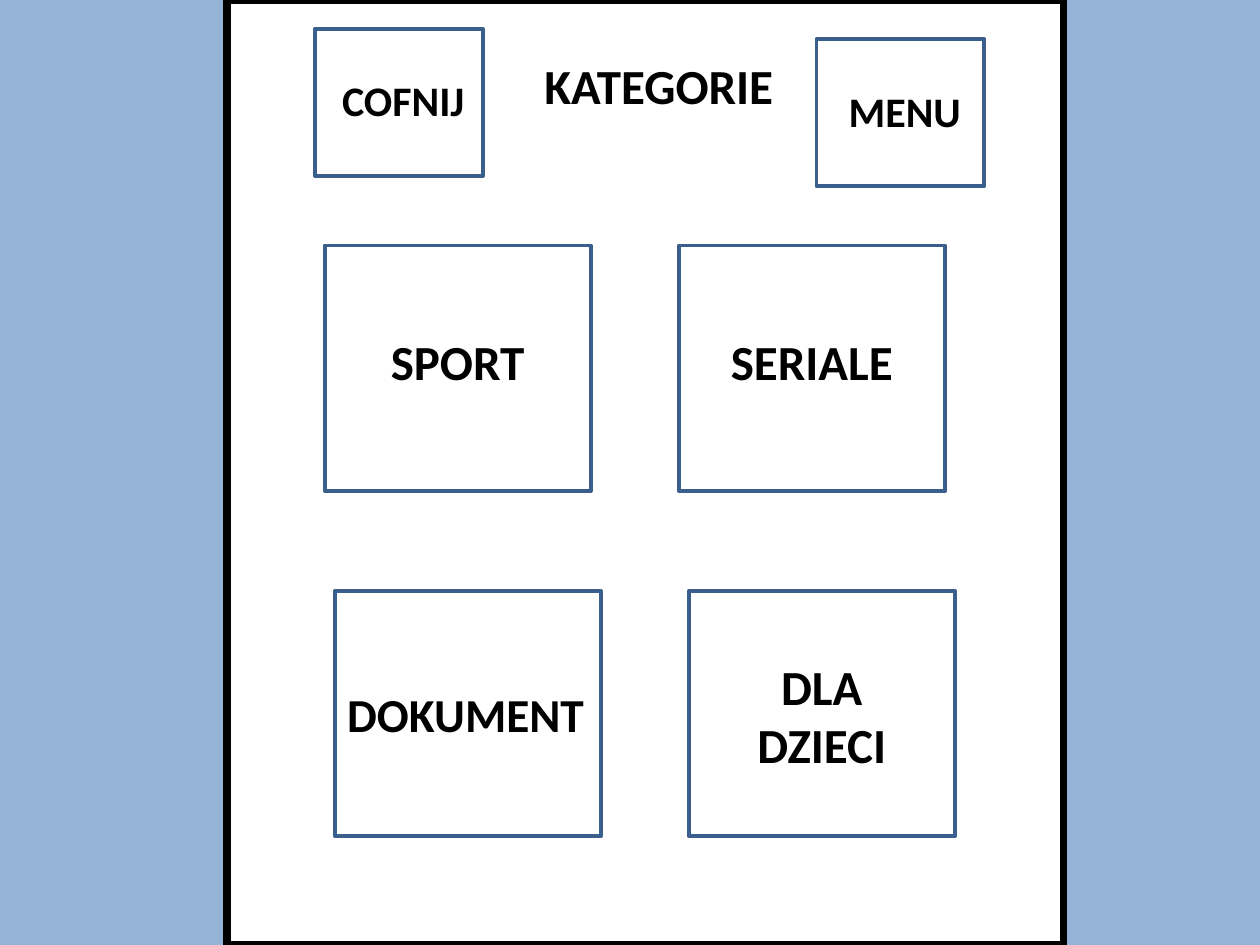
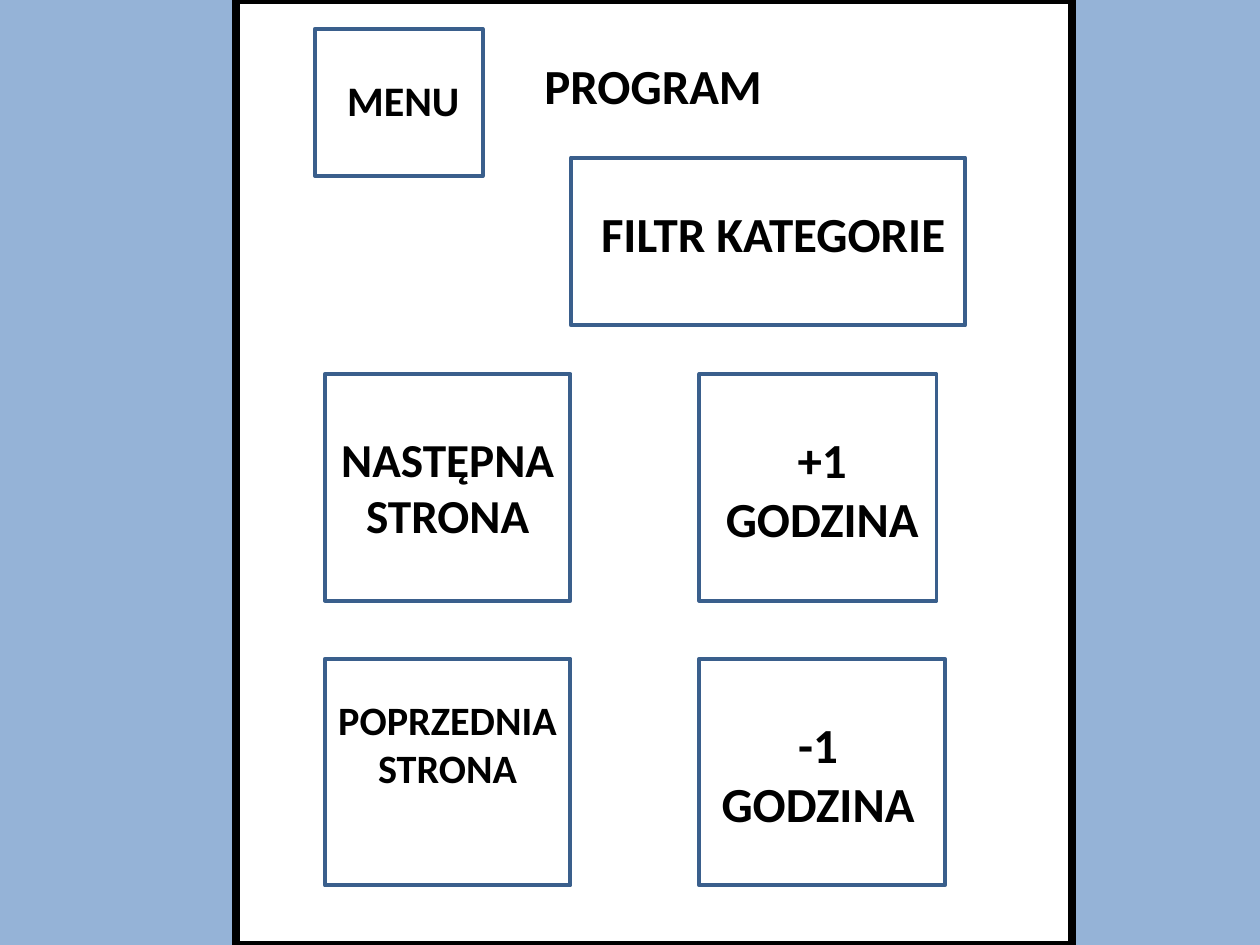
from dataclasses import dataclass

from pptx import Presentation
from pptx.dml.color import RGBColor
from pptx.enum.shapes import MSO_SHAPE
from pptx.enum.text import MSO_ANCHOR, MSO_AUTO_SIZE, PP_ALIGN
from pptx.presentation import Presentation as Deck
from pptx.shapes.autoshape import Shape
from pptx.slide import Slide
from pptx.text.text import TextFrame
from pptx.util import Cm, Pt

FONT = "Calibri"
BACKGROUND = "95B3D7"
PANEL_FILL = "FFFFFF"
BLACK = "000000"
BUTTON_LINE = "3A5F8C"

SLIDE_WIDTH, SLIDE_HEIGHT = 25.4, 19.05
PANEL_WIDTH = 16.87
TITLE_LEFT, TITLE_TOP = 10.72, 0.99
TITLE_SIZE = 28


@dataclass(frozen=True)
class Button:
    """An outlined button; lengths in cm, label offsets from its corner."""
    text: str
    left: float
    top: float
    width: float
    height: float
    label_dx: float
    label_dy: float
    label_width: float
    size: float = 28
    lines: int = 1
    align: PP_ALIGN = PP_ALIGN.CENTER


@dataclass(frozen=True)
class Screen:
    title: str
    title_width: float
    panel_left: float
    buttons: list[Button]


def corner_button(text: str, left: float, top: float) -> Button:
    return Button(text, left, top, 3.38, 2.97, -0.2, 0.8, 3.96, size=24)


def category_button(text: str, column: int, row: int, label_dx: float = 0.2,
                    label_dy: float = 1.6, label_width: float = 4.95,
                    **label_style) -> Button:
    """Place a category in a grid whose second row is shifted slightly right."""
    return Button(text, 6.55 + 7.14 * column + 0.2 * row, 4.95 + 6.96 * row,
                  5.36, 4.95, label_dx, label_dy, label_width, **label_style)


def paging_button(text: str, column: int, row: int, label_dy: float = 1.0,
                  width: float = 4.95, label_width: float = 4.95,
                  size: float = 28) -> Button:
    return Button(text, 6.55 + 7.55 * column, 7.54 + 5.74 * row, width, 4.57,
                  0, label_dy, label_width, size, lines=2)


SCREENS = [
    Screen("KATEGORIE", 5.16, 4.57, [
        corner_button("COFNIJ", 6.35, 0.58),
        corner_button("MENU", 16.46, 0.79),
        category_button("SPORT", 0, 0),
        category_button("SERIALE", 1, 0),
        category_button("DOKUMENT", 0, 1, 0, 1.78, 5.36,
                        size=27, align=PP_ALIGN.LEFT),
        category_button("DLA\nDZIECI", 1, 1, label_dy=1.19, lines=2),
    ]),
    Screen("PROGRAM", 5.77, 4.75, [
        corner_button("MENU", 6.35, 0.58),
        Button("FILTR KATEGORIE", 11.51, 3.18, 7.95, 3.38, 0.2, 0.79, 7.75),
        paging_button("NASTĘPNA\nSTRONA", 0, 0, size=27),
        paging_button("+1 GODZINA", 1, 0, width=4.78),
        paging_button("POPRZEDNIA\nSTRONA", 0, 1, label_dy=0.61, size=23),
        paging_button("-1 GODZINA", 1, 1, label_width=4.78),
    ]),
]


def colour(value: str) -> RGBColor:
    return RGBColor.from_string(value)


def text_height(size: float, lines: int = 1) -> float:
    """Height in cm of a text box with default margins."""
    return round(size * 0.043 * lines + 0.25, 2)


def write_text(frame: TextFrame, text: str, size: float, align: PP_ALIGN) -> None:
    frame.text = text
    frame.word_wrap = True
    frame.auto_size = MSO_AUTO_SIZE.SHAPE_TO_FIT_TEXT
    frame.vertical_anchor = MSO_ANCHOR.TOP
    for paragraph in frame.paragraphs:
        paragraph.alignment = align
        for run in paragraph.runs:
            run.font.name = FONT
            run.font.size = Pt(size)
            run.font.bold = True
            run.font.color.rgb = colour(BLACK)


def add_rectangle(slide: Slide, left: float, top: float, width: float,
                  height: float, line: str, line_width: float) -> Shape:
    """Add an unfilled rectangle."""
    shape = slide.shapes.add_shape(MSO_SHAPE.RECTANGLE, Cm(left), Cm(top),
                                   Cm(width), Cm(height))
    shape.shadow.inherit = False
    shape.fill.background()
    shape.line.color.rgb = colour(line)
    shape.line.width = Pt(line_width)
    return shape


def add_button(slide: Slide, button: Button) -> None:
    add_rectangle(slide, button.left, button.top, button.width, button.height,
                  BUTTON_LINE, 2.25)
    label = slide.shapes.add_textbox(
        Cm(button.left + button.label_dx), Cm(button.top + button.label_dy),
        Cm(button.label_width), Cm(text_height(button.size, button.lines)))
    write_text(label.text_frame, button.text, button.size, button.align)


def place_title(slide: Slide, text: str, width: float) -> None:
    """Format the title and bring it in front of the panel."""
    title = slide.shapes.title
    title.left, title.top = Cm(TITLE_LEFT), Cm(TITLE_TOP)
    title.width, title.height = Cm(width), Cm(text_height(TITLE_SIZE))
    write_text(title.text_frame, text, TITLE_SIZE, PP_ALIGN.LEFT)
    title.element.getparent().append(title.element)


def add_screen(presentation: Deck, screen: Screen) -> None:
    slide = presentation.slides.add_slide(
        presentation.slide_layouts.get_by_name("Title Only"))
    slide.background.fill.solid()
    slide.background.fill.fore_color.rgb = colour(BACKGROUND)
    panel = add_rectangle(slide, screen.panel_left, 0, PANEL_WIDTH,
                          SLIDE_HEIGHT, BLACK, 4.5)
    panel.fill.solid()
    panel.fill.fore_color.rgb = colour(PANEL_FILL)
    for button in screen.buttons:
        add_button(slide, button)
    place_title(slide, screen.title, screen.title_width)


def main() -> None:
    presentation = Presentation()
    presentation.slide_width = Cm(SLIDE_WIDTH)
    presentation.slide_height = Cm(SLIDE_HEIGHT)
    for screen in SCREENS:
        add_screen(presentation, screen)
    presentation.save("out.pptx")


if __name__ == "__main__":
    main()
